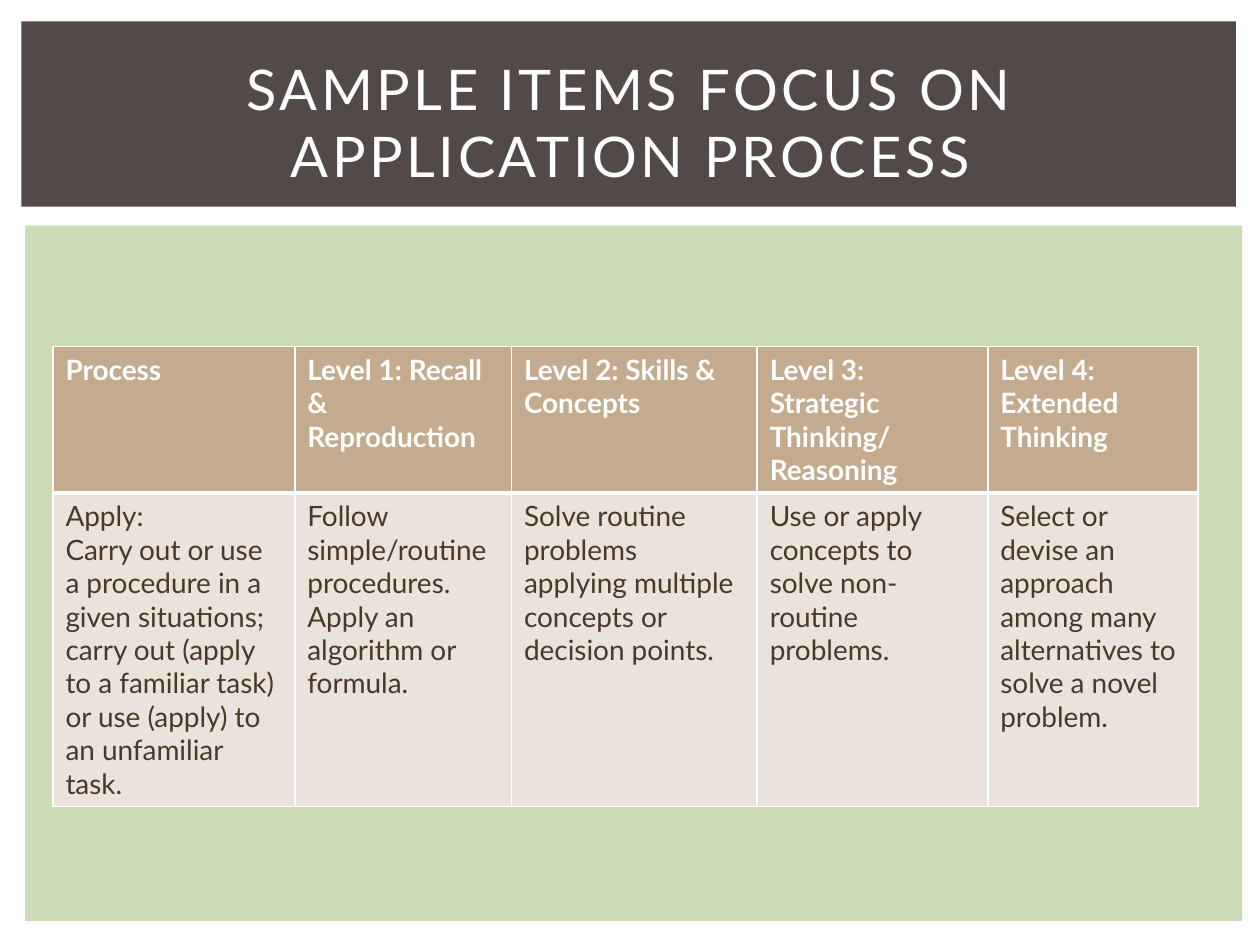
import dataclasses

import lxml.etree
import pptx
import pptx.dml.color
import pptx.enum.shapes
import pptx.enum.text
import pptx.oxml.ns
import pptx.util

Inches = pptx.util.Inches
Pt = pptx.util.Pt
qn = pptx.oxml.ns.qn
RGB = pptx.dml.color.RGBColor.from_string


@dataclasses.dataclass(frozen=True)
class Theme:
    font: str = "Lato"
    white: str = "FFFFFF"
    green: str = "CBDCB6"
    dark: str = "534949"
    tan: str = "C4AB8F"
    cream: str = "EAE2DB"
    brown: str = "4A3927"
    title: int = 32
    body: int = 16


@dataclasses.dataclass(frozen=True)
class Panel:
    left: float
    top: float
    width: float
    height: float
    fill: str


@dataclasses.dataclass(frozen=True)
class Column:
    width: float
    head: str
    text: str


THEME = Theme()
PANELS = (
    Panel(0.2, 1.79, 9.66, 5.52, THEME.green),
    Panel(0.17, 0.17, 9.64, 1.47, THEME.dark),
)
COLUMNS = (
    Column(1.92, "Process",
           "Apply:\nCarry out or use a procedure in a given situations; carry out "
           "(apply to a familiar task) or use (apply) to an unfamiliar task."),
    Column(1.72, "Level 1: Recall & Reproduction",
           "Follow simple/routine procedures.\nApply an algorithm or formula."),
    Column(1.95, "Level 2: Skills & Concepts",
           "Solve routine problems applying multiple concepts or decision points."),
    Column(1.83, "Level 3: Strategic Thinking/\nReasoning",
           "Use or apply concepts to solve non-routine problems."),
    Column(1.67, "Level 4: Extended Thinking",
           "Select or devise an approach among many alternatives to solve a novel problem."),
)
ROWS = (1.16, 2.49)


def write(frame, text: str, *, size: int, color: str, bold: bool = False,
          align=pptx.enum.text.PP_ALIGN.LEFT, space: float = 0) -> None:
    """Fill a text frame, one paragraph a line; space is letter spacing in points."""
    frame.word_wrap = True
    for i, line in enumerate(text.split("\n")):
        para = frame.paragraphs[0] if i == 0 else frame.add_paragraph()
        para.alignment = align
        run = para.add_run()
        run.text = line
        font = run.font
        font.name, font.size, font.bold = THEME.font, Pt(size), bold
        font.color.rgb = RGB(color)
        if space:
            run._r.get_or_add_rPr().set("spc", str(int(space * 100)))


def draw_panel(slide, panel: Panel) -> None:
    shape = slide.shapes.add_shape(
        pptx.enum.shapes.MSO_SHAPE.RECTANGLE, Inches(panel.left), Inches(panel.top),
        Inches(panel.width), Inches(panel.height))
    shape.shadow.inherit = False
    shape.fill.solid()
    shape.fill.fore_color.rgb = RGB(panel.fill)
    shape.line.fill.background()


def draw_title(slide, text: str) -> None:
    title = slide.shapes.title
    title.left, title.top = Inches(0.42), Inches(0.39)
    title.width, title.height = Inches(9.17), Inches(1.15)
    frame = title.text_frame
    frame.auto_size = pptx.enum.text.MSO_AUTO_SIZE.NONE
    frame.vertical_anchor = pptx.enum.text.MSO_ANCHOR.MIDDLE
    write(frame, text, size=THEME.title, color=THEME.white,
          align=pptx.enum.text.PP_ALIGN.CENTER, space=2)
    # Bring the title in front of the panels.
    slide.shapes._spTree.append(title._element)


def set_edges(cell, **widths: float) -> None:
    """Draw white cell borders; widths are points by side, in the order L, R, T, B."""
    props = cell._tc.get_or_add_tcPr()
    for i, (side, width) in enumerate(widths.items()):
        line = lxml.etree.Element(qn(f"a:ln{side}"), w=str(Pt(width)))
        fill = lxml.etree.SubElement(line, qn("a:solidFill"))
        lxml.etree.SubElement(fill, qn("a:srgbClr"), val=THEME.white)
        props.insert(i, line)


def draw_cell(cell, text: str, *, fill: str, color: str, bold: bool,
              top: float, base: float) -> None:
    cell.fill.solid()
    cell.fill.fore_color.rgb = RGB(fill)
    write(cell.text_frame, text, size=THEME.body, color=color, bold=bold)
    set_edges(cell, L=1, R=1, T=top, B=base)


def draw_table(slide) -> None:
    width = sum(col.width for col in COLUMNS)
    table = slide.shapes.add_table(
        len(ROWS), len(COLUMNS), Inches(0.42), Inches(2.75),
        Inches(width), Inches(sum(ROWS))).table
    for row, height in zip(table.rows, ROWS):
        row.height = Inches(height)
    for i, col in enumerate(COLUMNS):
        table.columns[i].width = Inches(col.width)
        draw_cell(table.cell(0, i), col.head, fill=THEME.tan, color=THEME.white,
                  bold=True, top=1, base=3)
        draw_cell(table.cell(1, i), col.text, fill=THEME.cream, color=THEME.brown,
                  bold=False, top=3, base=1)


def main() -> None:
    deck = pptx.Presentation()
    deck.slide_width, deck.slide_height = Inches(10), Inches(7.5)
    slide = deck.slides.add_slide(deck.slide_layouts.get_by_name("Title Only"))
    for panel in PANELS:
        draw_panel(slide, panel)
    draw_title(slide, "SAMPLE ITEMS FOCUS ON APPLICATION PROCESS")
    draw_table(slide)
    deck.save("out.pptx")


if __name__ == "__main__":
    main()
